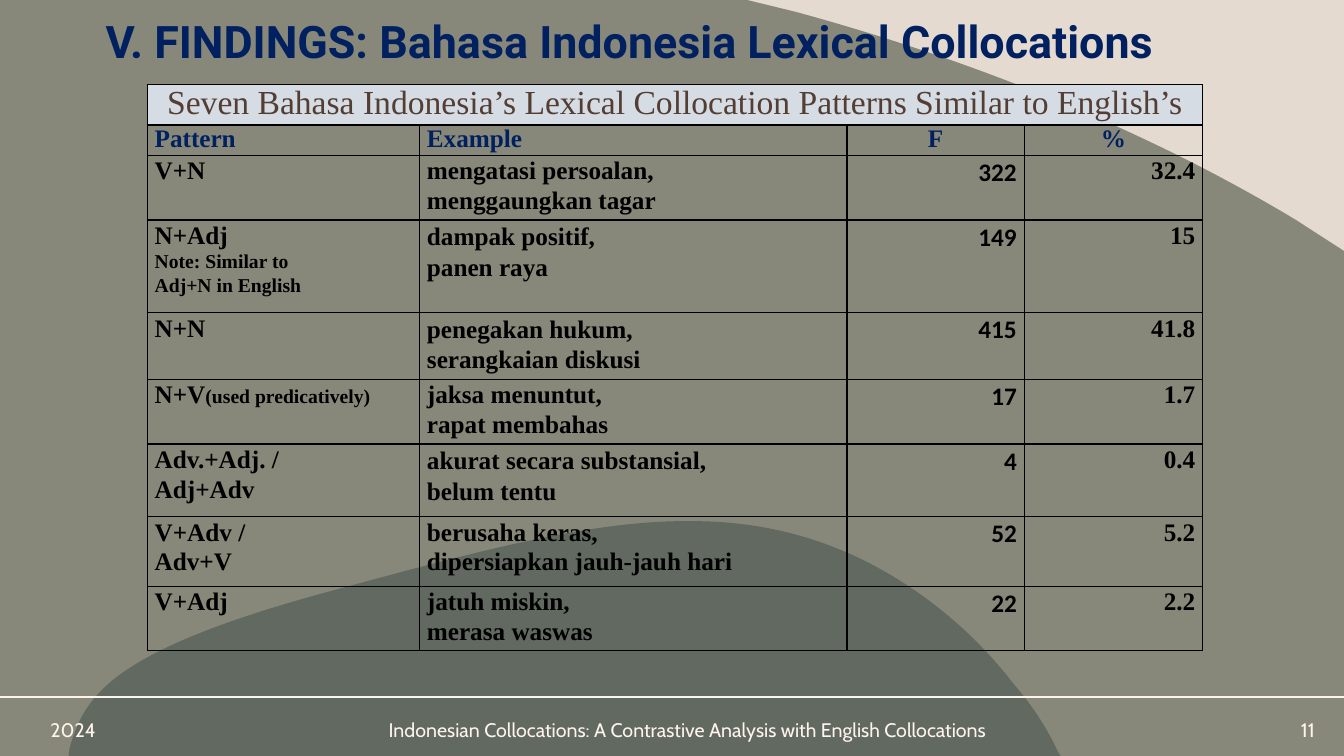
"""Builds the slide on Bahasa Indonesia lexical collocation patterns."""
from lxml.etree import SubElement
from pptx import Presentation
from pptx.dml.color import RGBColor
from pptx.enum.shapes import MSO_CONNECTOR
from pptx.enum.text import MSO_ANCHOR, PP_ALIGN
from pptx.oxml import parse_xml
from pptx.oxml.ns import nsdecls, qn
from pptx.util import Inches, Pt

W, H = Inches(13.33), Inches(7.5)
COLORS = {"sand": "E5DACF", "slate": "5D6A76", "olive": "4E5745", "cream": "FEF3ED",
          "navy": "002060", "brown": "543E34", "mist": "D5DCE4", "black": "000000"}
SERIF = "Times New Roman"
LEFT, CENTER, RIGHT = PP_ALIGN.LEFT, PP_ALIGN.CENTER, PP_ALIGN.RIGHT
JUSTIFY = PP_ALIGN.JUSTIFY

HILL = [(51.39, 68.93), (55.81, 68.93, 59.94, 70.4, 64.14, 74),
        (69.77, 78.93, 73.44, 85.87, 75.39, 90.4),
        (76.44, 92.53, 77.72, 95.6, 78.69, 99.33),
        (78.92, 100), (5.1, 100), (5.18, 98.93),
        (5.33, 98, 5.48, 97.2, 5.7, 96.27),
        (6.98, 90.67, 10.13, 85.2, 24.16, 78.4),
        (35.48, 72.93, 43.96, 68.8, 51.39, 68.93)]
VEIL = [(0, 0), (55.59, 0), (59.26, 1.6), (72.99, 8.27, 85.67, 17.6, 96.4, 29.07),
        (100, 33.2), (100, 100), (0, 100)]

COLS = [20.26, 31.81, 13.2, 13.28]
ROWS = [4.93, 3.73, 8.53, 12.27, 8.53, 8.53, 9.6, 9.2, 8.53]
TIGHT, NORMAL, LOOSE = 1, 1.07, 1.1
CAPTION = "Seven Bahasa Indonesia’s Lexical Collocation Patterns Similar to English’s"
HEADINGS = [("Pattern", LEFT), ("Example", LEFT), ("F", CENTER), ("%", CENTER)]
PATTERNS = [
    ([[("V+N", 18)]], ["mengatasi persoalan,", "menggaungkan tagar"],
     NORMAL, "322", "32.4"),
    ([[("N+Adj", 18)], [("Note: Similar to", 14)], [("Adj+N in English", 14)]],
     ["dampak positif,", "panen raya"], LOOSE, "149", "15"),
    ([[("N+N", 18)]], ["penegakan hukum,", "serangkaian diskusi"], LOOSE, "415", "41.8"),
    ([[("N+V", 18), ("(used predicatively)", 14)]],
     ["jaksa menuntut,", "rapat membahas"], NORMAL, "17", "1.7"),
    ([[("Adv.+Adj. /", 18)], [("Adj+Adv", 18)]],
     ["akurat secara substansial,", "belum tentu"], LOOSE, "4", "0.4"),
    ([[("V+Adv /", 18)], [("Adv+V", 18)]],
     ["berusaha keras,", "dipersiapkan jauh-jauh hari"], NORMAL, "52", "5.2"),
    ([[("V+Adj", 18)]], ["jatuh miskin,", "merasa waswas"], NORMAL, "22", "2.2"),
]


def px(share):
    """Turn a percentage of the slide width into a length."""
    return round(W * share / 100)


def py(share):
    """Turn a percentage of the slide height into a length."""
    return round(H * share / 100)


def rgb(name):
    """Look up a named colour."""
    return RGBColor.from_string(COLORS[name])


def style(font, name, size, color, bold=False):
    """Set the look of a font."""
    font.name, font.size, font.bold = name, Pt(size), bold
    font.color.rgb = rgb(color)


def bend(sp, steps):
    """Turn the six-number steps of a freeform into cubic curves."""
    segments = list(sp._element.iter(qn("a:path")))[0]
    for segment, step in zip(list(segments), steps):
        if len(step) == 6:
            segment.tag = qn("a:cubicBezTo")
            segment.remove(segment[0])
            for x, y in zip(step[::2], step[1::2]):
                SubElement(segment, qn("a:pt"), x=str(px(x) - sp.left), y=str(py(y) - sp.top))


def add_backdrop(s, steps, color, alpha):
    """Add a translucent curved shape."""
    pts = [(px(step[-2]), py(step[-1])) for step in steps]
    fb = s.shapes.build_freeform(*pts[0])
    fb.add_line_segments(pts[1:], close=True)
    sp = fb.convert_to_shape()
    bend(sp, steps)
    sp.shadow.inherit = False
    sp.line.fill.background()
    sp.fill.solid()
    sp.fill.fore_color.rgb = rgb(color)
    clr = sp._element.spPr.find(qn("a:solidFill"))[0]
    SubElement(clr, qn("a:alpha"), val=str(alpha * 1000))


def add_rule(s, y):
    """Draw the full-width line above the footer."""
    cx = s.shapes.add_connector(MSO_CONNECTOR.STRAIGHT, 0, py(y), W, py(y))
    cx.line.color.rgb, cx.line.width = rgb("cream"), Pt(1.25)
    SubElement(cx._element.spPr, qn("a:effectLst"))


def add_title(s, text):
    """Place and format the title in front of the backdrop."""
    sp = s.shapes.title
    sp.left, sp.top, sp.width, sp.height = px(7.1), py(2.4), px(85.45), py(6.8)
    s.shapes._spTree.append(sp._element)
    tf = sp.text_frame
    tf.text, tf.vertical_anchor, tf.word_wrap = text, MSO_ANCHOR.MIDDLE, True
    p = tf.paragraphs[0]
    p.alignment, p.line_spacing = LEFT, 0.9
    style(p.font, "Roboto", 32, "navy", True)


def add_footer(s, text, x, w, align):
    """Add one footer field."""
    tf = s.shapes.add_textbox(px(x), py(94.27), px(w), py(4.53)).text_frame
    tf.word_wrap, tf.vertical_anchor = True, MSO_ANCHOR.MIDDLE
    p = tf.paragraphs[0]
    p.text, p.alignment = text, align
    style(p.font, "Cabin", 14, "cream")


def format_cell(cell, fill=None):
    """Set the margins, black borders and fill of a cell."""
    cell.margin_left = cell.margin_right = Pt(5.4)
    cell.margin_top = cell.margin_bottom = 0
    tcPr = cell._tc.get_or_add_tcPr()
    for side in ("lnL", "lnR", "lnT", "lnB"):
        tcPr.append(parse_xml(
            f'<a:{side} {nsdecls("a")} w="12700"><a:solidFill>'
            f'<a:srgbClr val="{COLORS["black"]}"/></a:solidFill></a:{side}>'))
    if fill:
        cell.fill.solid()
        cell.fill.fore_color.rgb = rgb(fill)
    else:
        cell.fill.background()


def write_cell(cell, lines, align, font=SERIF, color="black", bold=True, spacing=NORMAL):
    """Write lines, each a list of (text, size) runs, into a cell."""
    tf = cell.text_frame
    for i, line in enumerate(lines):
        p = tf.paragraphs[0] if i == 0 else tf.add_paragraph()
        p.alignment, p.line_spacing = align, float(spacing)
        for text, size in line:
            r = p.add_run()
            r.text = text
            style(r.font, font, size, color, bold)


def add_patterns(s):
    """Add the table of collocation patterns."""
    tbl = s.shapes.add_table(len(ROWS), len(COLS), px(10.95), py(11.2),
                             px(sum(COLS)), py(sum(ROWS))).table
    tbl.first_row = tbl.horz_banding = False
    for col, w in zip(tbl.columns, COLS):
        col.width = px(w)
    for row, h in zip(tbl.rows, ROWS):
        row.height = py(h)
    for i in range(len(ROWS)):
        for j in range(len(COLS)):
            format_cell(tbl.cell(i, j), None if i else "mist")
    tbl.cell(0, 0).merge(tbl.cell(0, 3))
    write_cell(tbl.cell(0, 0), [[(CAPTION, 24)]], CENTER, color="brown", bold=False,
               spacing=TIGHT)
    for j, (text, align) in enumerate(HEADINGS):
        write_cell(tbl.cell(1, j), [[(text, 18)]], align, color="navy", spacing=TIGHT)
    for i, (pattern, examples, spacing, freq, percent) in enumerate(PATTERNS, 2):
        write_cell(tbl.cell(i, 0), pattern, JUSTIFY)
        write_cell(tbl.cell(i, 1), [[(e, 18)] for e in examples], JUSTIFY, spacing=spacing)
        write_cell(tbl.cell(i, 2), [[(freq, 18)]], RIGHT, font="Calibri")
        write_cell(tbl.cell(i, 3), [[(percent, 18)]], RIGHT)


def main():
    """Build and save the slide."""
    prs = Presentation()
    prs.slide_width, prs.slide_height = W, H
    s = prs.slides.add_slide(prs.slide_layouts[5])
    s.background.fill.solid()
    s.background.fill.fore_color.rgb = rgb("sand")
    add_backdrop(s, HILL, "slate", 73)
    add_backdrop(s, VEIL, "olive", 62)
    add_rule(s, 92.2)
    add_title(s, "V. FINDINGS: Bahasa Indonesia Lexical Collocations")
    add_footer(s, "2024", 3, 8.1, LEFT)
    add_footer(s, "Indonesian Collocations: A Contrastive Analysis with English Collocations",
               24.23, 53.86, CENTER)
    add_footer(s, "11", 90.47, 8.1, RIGHT)
    add_patterns(s)
    prs.save("out.pptx")


if __name__ == "__main__":
    main()
